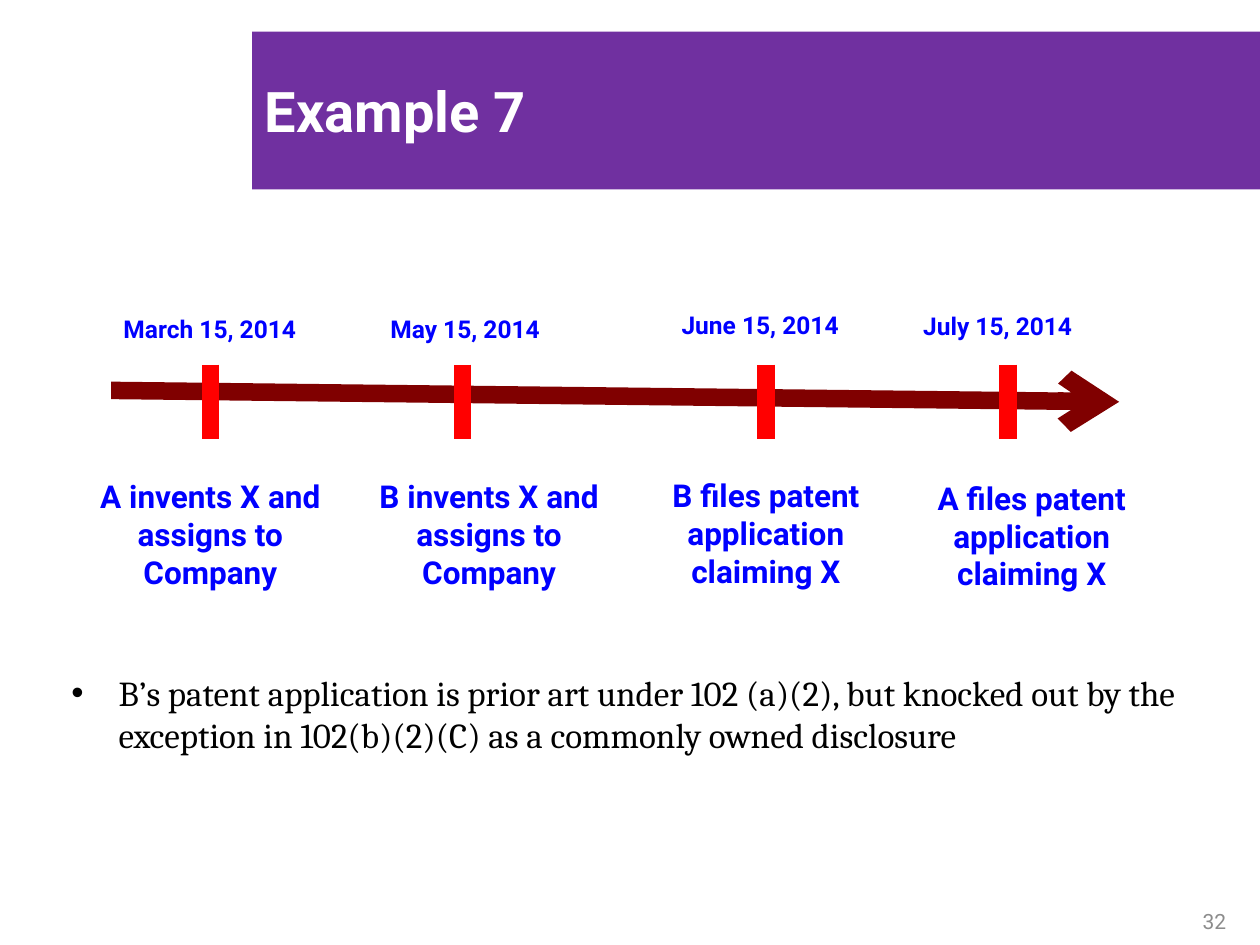
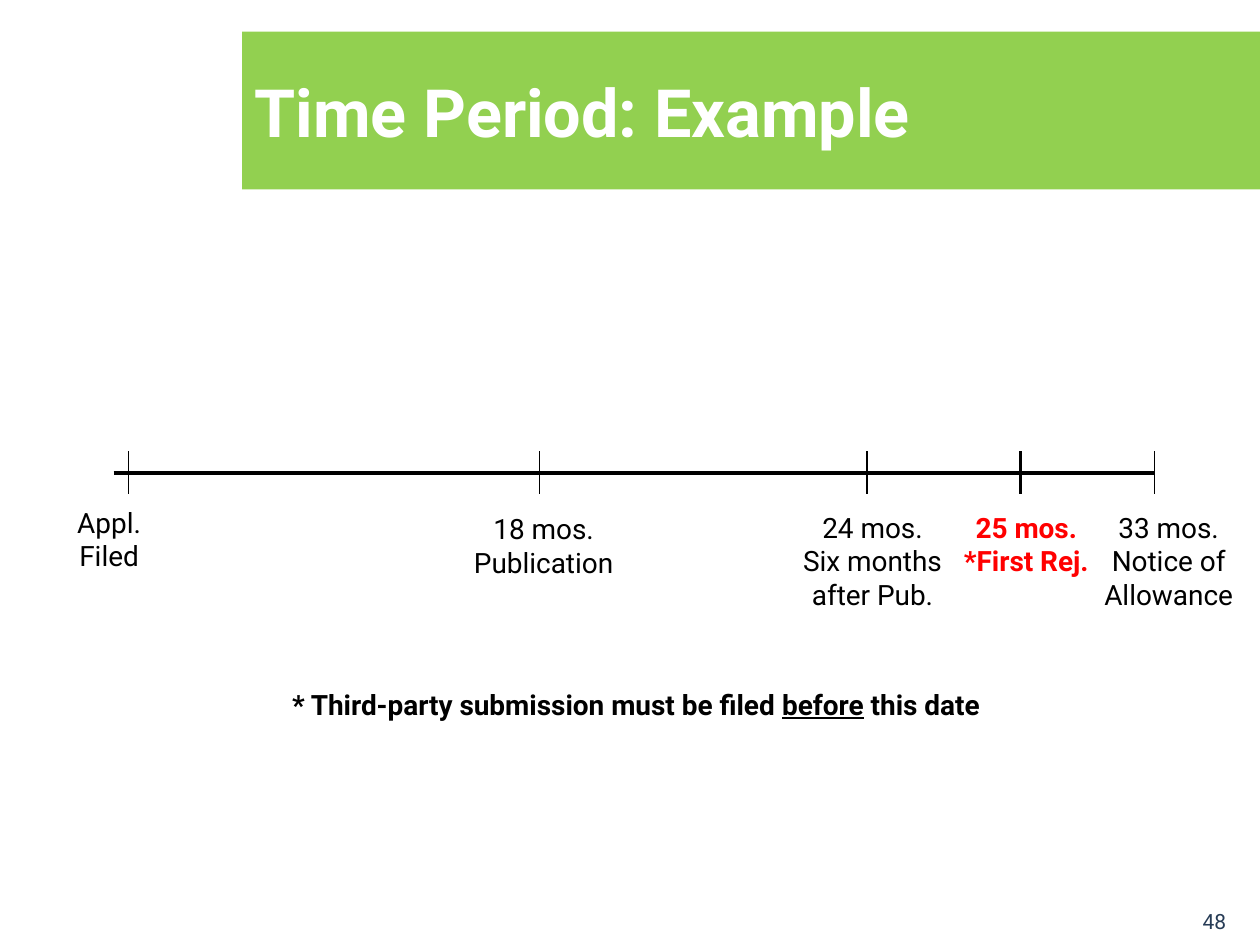
from lxml import etree
from pptx import Presentation
from pptx.dml.color import RGBColor
from pptx.enum.shapes import MSO_CONNECTOR
from pptx.enum.text import MSO_ANCHOR, PP_ALIGN
from pptx.oxml.ns import qn
from pptx.util import Cm, Pt

LEFT, MID, RIGHT = PP_ALIGN.LEFT, PP_ALIGN.CENTER, PP_ALIGN.RIGHT
TOP, CENTRE, BASE = MSO_ANCHOR.TOP, MSO_ANCHOR.MIDDLE, MSO_ANCHOR.BOTTOM
STRAIGHT = MSO_CONNECTOR.STRAIGHT
TITLE_ONLY = 5
WIDE, HIGH = 25.4, 19.05

SANS, SERIF = "Roboto", "Cambria"
WHITE, BLACK, RED, BLUE = "FFFFFF", "000000", "FF0000", "0000FF"
PURPLE, GREEN, MAROON = "7030A0", "92D050", "800000"
GREY, NAVY = "8C8C8C", "273C56"


def tint(code):
    return RGBColor.from_string(code)


def add_run(para, text, size, color, bold=False, face=SANS, under=False):
    run = para.add_run()
    run.text = text
    font = run.font
    font.name, font.size, font.bold = face, Pt(size), bold
    font.underline = under
    font.color.rgb = tint(color)


def add_box(slide, x, y, w, h, anchor=TOP):
    """Add a wrapping text box and return its text frame."""
    box = slide.shapes.add_textbox(Cm(x), Cm(y), Cm(w), Cm(h))
    frame = box.text_frame
    frame.word_wrap = True
    frame.vertical_anchor = anchor
    return frame


def add_label(slide, x, y, w, h, lines, size, color, bold=False, align=MID):
    """Add one paragraph for each line of text."""
    frame = add_box(slide, x, y, w, h)
    for i, line in enumerate(lines):
        para = frame.add_paragraph() if i else frame.paragraphs[0]
        para.alignment = align
        add_run(para, line, size, color, bold)


def add_line(slide, x1, y1, x2, y2, color, width, arrow=False):
    line = slide.shapes.add_connector(STRAIGHT, Cm(x1), Cm(y1), Cm(x2), Cm(y2))
    line.line.color.rgb = tint(color)
    line.line.width = Pt(width)
    props = line.line._get_or_add_ln()
    if arrow:
        etree.SubElement(props, qn("a:tailEnd"), type="arrow")
    etree.SubElement(props.getparent(), qn("a:effectLst"))


def add_page(deck, title, size, band, left, number, shade):
    """Start a slide with its title band and page number."""
    slide = deck.slides.add_slide(deck.slide_layouts[TITLE_ONLY])
    head = slide.shapes.title
    head.left, head.top = Cm(left), Cm(0.64)
    head.width, head.height = Cm(WIDE - left), Cm(3.18)
    head.fill.solid()
    head.fill.fore_color.rgb = tint(band)
    frame = head.text_frame
    frame.vertical_anchor = CENTRE
    para = frame.paragraphs[0]
    para.alignment = LEFT
    add_run(para, title, size, WHITE, True)

    foot = add_box(slide, 19.69, 17.58, 5.28, 1.27, BASE)
    foot.margin_bottom = Cm(0.03)
    para = foot.paragraphs[0]
    para.alignment = RIGHT
    add_run(para, number, 12, shade)
    return slide


def add_bullet(slide, x, y, w, h, text):
    para = add_box(slide, x, y, w, h).paragraphs[0]
    props = para._p.get_or_add_pPr()
    props.set("marL", str(Cm(0.95)))
    props.set("indent", str(-Cm(0.95)))
    etree.SubElement(props, qn("a:buFont"), typeface="Arial")
    etree.SubElement(props, qn("a:buChar"), char="•")
    add_run(para, text, 20, BLACK, face=SERIF)


def draw_dates(deck):
    slide = add_page(deck, "Example 7", 32, PURPLE, 5.08, "32", GREY)
    add_line(slide, 2.24, 7.87, 22.56, 8.1, MAROON, 10, arrow=True)

    # Tick, date left and top, event centre and top, date, event
    events = [
        (4.24, 2.24, 6.2, 4.24, 9.5, "March 15, 2014",
         ["A invents X and assigns to Company"]),
        (9.32, 7.62, 6.2, 9.86, 9.5, "May 15, 2014",
         ["B invents X and assigns to Company"]),
        (15.44, 13.49, 6.12, 15.44, 9.47, "June 15, 2014",
         ["B files patent application", "claiming X"]),
        (20.32, 18.36, 6.15, 20.8, 9.53, "July 15, 2014",
         ["A files patent application", "claiming X"]),
    ]
    for tick, left, top, mid, low, date, event in events:
        add_line(slide, tick, 7.35, tick, 8.84, RED, 10)
        add_label(slide, left, top, 4.6, 0.86, [date], 14, BLUE, True, LEFT)
        add_label(slide, mid - 2.64, low, 5.28, 2.57, event, 18, BLUE, True)

    add_bullet(slide, 1.19, 13.41, 23.34, 4.6,
               "B’s patent application is prior art under 102 (a)(2), but "
               "knocked out by the exception in 102(b)(2)(C) as a commonly "
               "owned disclosure")


def draw_months(deck):
    slide = add_page(deck, "Time Period: Example", 38, GREEN, 4.88, "48", NAVY)
    add_line(slide, 2.29, 9.53, 23.27, 9.53, BLACK, 2)

    # Tick, label centre and top, lines, key date or not
    stages = [
        (2.59, 2.2, 10.06, ["Appl.", "Filed"], False),
        (10.87, 10.96, 10.19, ["18 mos.", "Publication"], False),
        (17.48, 17.59, 10.16, ["24 mos.", "Six months", "after Pub."], False),
        (20.57, 20.69, 10.16, ["25 mos.", "*First Rej."], True),
        (23.27, 23.56, 10.16, ["33 mos.", "Notice of Allowance"], False),
    ]
    for tick, mid, top, lines, key in stages:
        add_line(slide, tick, 9.1, tick, 9.96, BLACK, 1.5 if key else 0.75)
        add_label(slide, mid - 1.83, top, 3.66, 2.3, lines, 16,
                  RED if key else BLACK, key)

    # Note on the key date
    para = add_box(slide, 4.45, 13.72, 16.74, 0.94, CENTRE).paragraphs[0]
    para.alignment = MID
    add_run(para, "* Third-party submission must be filed ", 16, BLACK, True)
    add_run(para, "before", 16, BLACK, True, under=True)
    add_run(para, " this date", 16, BLACK, True)


def main():
    deck = Presentation()
    deck.slide_width, deck.slide_height = Cm(WIDE), Cm(HIGH)
    draw_dates(deck)
    draw_months(deck)
    deck.save("out.pptx")


if __name__ == "__main__":
    main()
